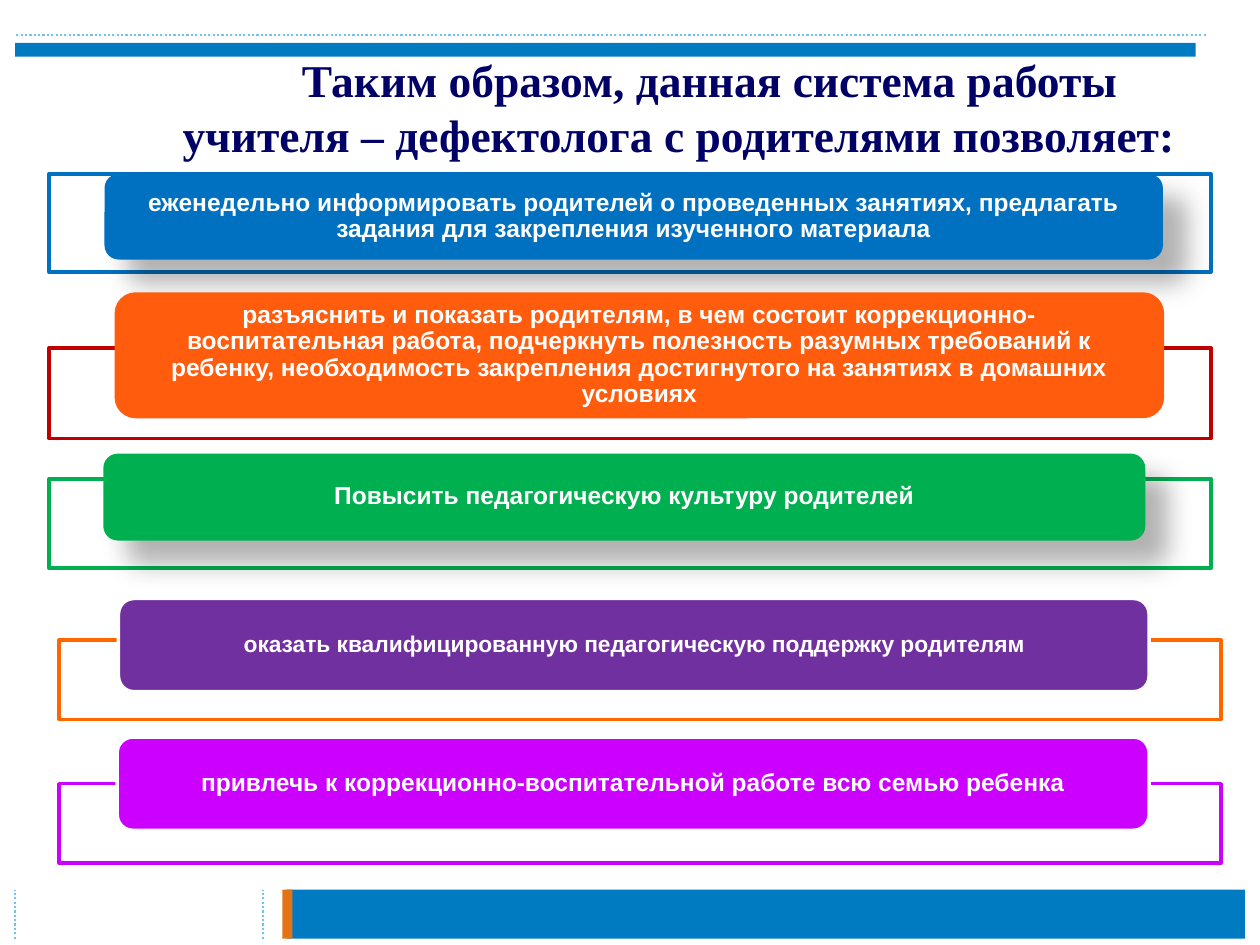
from pptx import Presentation
from pptx.dml.color import RGBColor
from pptx.enum.shapes import MSO_CONNECTOR as CONN, MSO_SHAPE as SHAPE
from pptx.enum.text import MSO_ANCHOR as ANCHOR, MSO_AUTO_SIZE as AUTO, PP_ALIGN as ALIGN
from pptx.oxml import parse_xml
from pptx.oxml.ns import nsdecls
from pptx.util import Inches, Pt

THEME = {
    "white": "FFFFFF", "band": "007BC2", "accent": "E37416", "dots": "71C4F0",
    "dot_width": 1.25, "line_width": 2,
    "title": {"name": "Times New Roman", "size": Pt(26), "bold": True},
    "title_color": "000066",
    "label": {"name": "Arial", "bold": True},
}

prs = Presentation()
prs.slide_width, prs.slide_height = Inches(10), Inches(7.5)
COL, ROW = prs.slide_width / 100, prs.slide_height / 75
s = prs.slides.add_slide(prs.slide_layouts[5])


def grid(x, y, w, h):
    return int(x * COL), int(y * ROW), int(w * COL), int(h * ROW)


def add_box(kind, place, fill, line=None):
    sp = s.shapes.add_shape(kind, *grid(*place))
    sp.shadow.inherit = False
    sp.fill.solid()
    sp.fill.fore_color.rgb = RGBColor.from_string(fill)
    if line:
        sp.line.color.rgb = RGBColor.from_string(line)
        sp.line.width = Pt(THEME["line_width"])
    else:
        sp.line.fill.background()
    return sp


# Bands at the top and bottom
for place, color in [((22.8, 70.6, 76, 3.9), "band"), ((22.4, 70.6, 0.8, 3.9), "accent"),
                     ((1.2, 3.4, 93.7, 1.1), "band")]:
    add_box(SHAPE.RECTANGLE, place, THEME[color])

# Dotted rules
for x1, y1, x2, y2 in [(20.9, 74.5, 20.9, 70.6), (1.2, 74.5, 1.2, 70.6),
                       (95.7, 2.8, 1.2, 2.8)]:
    rule = s.shapes.add_connector(CONN.STRAIGHT, *grid(x1, y1, x2, y2))
    rule.line.color.rgb = RGBColor.from_string(THEME["dots"])
    rule.line.width = Pt(THEME["dot_width"])
    rule.line._get_or_add_ln().append(parse_xml(f'<a:prstDash {nsdecls("a")} val="sysDot"/>'))
    rule._element.spPr.append(parse_xml(f'<a:effectLst {nsdecls("a")}/>'))

# Title with an indented first line
title = s.shapes.title
title.left, title.top, title.width, title.height = grid(11.7, 3.6, 84.4, 9.8)
tf = title.text_frame
tf.auto_size, tf.word_wrap, tf.vertical_anchor = AUTO.NONE, True, ANCHOR.MIDDLE
p = tf.paragraphs[0]
p.alignment = ALIGN.CENTER
p._p.get_or_add_pPr().set("indent", str(Inches(0.49)))
r = p.add_run()
r.text = "Таким образом, данная система работы учителя – дефектолога с родителями позволяет:"
for name, value in THEME["title"].items():
    setattr(r.font, name, value)
r.font.color.rgb = RGBColor.from_string(THEME["title_color"])

# Outcomes: frame place, frame colour, label place, label colour, edge, shadow, size, text
FRAME_W = 92.2
OUTCOMES = [
    ((3.9, 13.8, FRAME_W, 7.8), "0070C0", (8.3, 13.8, 84, 6.8), "0070C0", None, True, 14,
     "еженедельно информировать родителей о проведенных занятиях, предлагать задания "
     "для закрепления изученного материала"),
    ((3.9, 27.6, FRAME_W, 7.2), "C00000", (9.1, 23.2, 83.3, 10), "FF5D0D", None, False, 14,
     "разъяснить и показать родителям, в чем состоит коррекционно-воспитательная работа, "
     "подчеркнуть полезность разумных требований к ребенку, необходимость закрепления "
     "достигнутого на занятиях в домашних условиях"),
    ((3.9, 38, FRAME_W, 7.1), "00B050", (8.2, 36, 82.7, 6.9), "00B050", None, True, 14,
     "Повысить педагогическую культуру родителей"),
    ((4.7, 50.8, FRAME_W, 6.3), "FF6600", (9.4, 47.5, 81.8, 7.4), "7030A0",
     THEME["white"], False, 13,
     "оказать квалифицированную педагогическую поддержку родителям"),
    ((4.7, 62.2, FRAME_W, 6.3), "CC00FF", (9.3, 58.5, 81.9, 7.4), "CC00FF",
     THEME["white"], False, 14,
     "привлечь к коррекционно-воспитательной работе всю семью ребенка"),
]
SHADOW = (f'<a:outerShdw {nsdecls("a")} blurRad="{Pt(15)}" dist="{Pt(18)}" dir="2700000" '
          'algn="tl" rotWithShape="0"><a:srgbClr val="000000"><a:alpha val="30000"/>'
          '</a:srgbClr></a:outerShdw>')
LABEL_FRAME = {"word_wrap": True, "vertical_anchor": ANCHOR.MIDDLE,
               "margin_left": Inches(0.28), "margin_right": Inches(0.28),
               "margin_top": 0, "margin_bottom": 0}

for frame, frame_color, place, color, edge, shadow, size, text in OUTCOMES:
    add_box(SHAPE.RECTANGLE, frame, THEME["white"], frame_color)
    label = add_box(SHAPE.ROUNDED_RECTANGLE, place, color, edge)
    if shadow:
        label._element.spPr.find("{*}effectLst").append(parse_xml(SHADOW))
    tf = label.text_frame
    for name, value in LABEL_FRAME.items():
        setattr(tf, name, value)
    p = tf.paragraphs[0]
    p.alignment, p.line_spacing = ALIGN.CENTER, 0.9
    r = p.add_run()
    r.text = text
    for name, value in {**THEME["label"], "size": Pt(size)}.items():
        setattr(r.font, name, value)
    r.font.color.rgb = RGBColor.from_string(THEME["white"])

prs.save("out.pptx")
